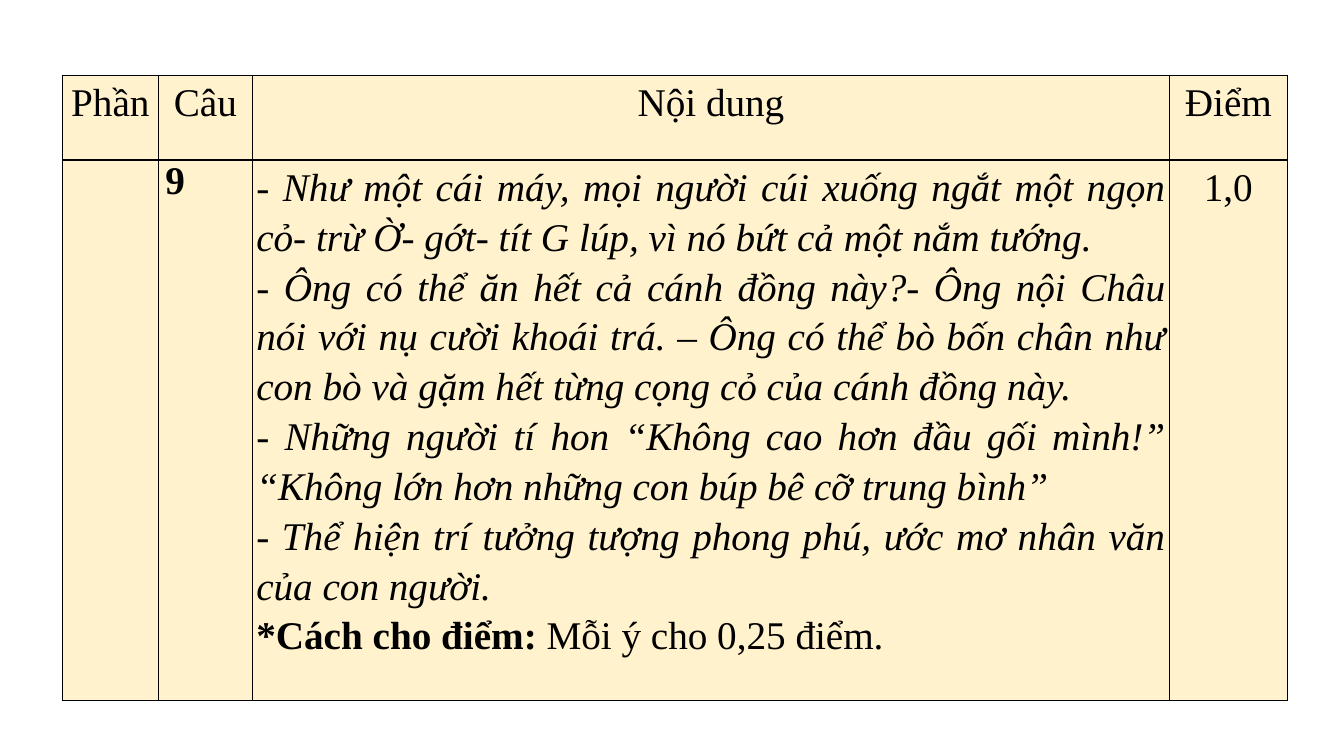
from lxml.etree import SubElement
from pptx import Presentation
from pptx.dml.color import RGBColor
from pptx.enum.text import PP_ALIGN
from pptx.oxml.ns import qn
from pptx.util import Cm, Pt

COLORS = {"text": "000000", "border": "000000", "cell": "FFF2CC", "page": "FFFFFF"}
FONT = "Times New Roman"
COLUMN_WIDTHS = [2.42, 2.37, 23.11, 2.97]
ROW_HEIGHTS = [2.13, 13.63]
HEADERS = ["Phần", "Câu", "Nội dung", "Điểm"]
ANSWERS = [
    "- Như một cái máy, mọi người cúi xuống ngắt một ngọn cỏ- trừ Ờ- gớt- tít G lúp, "
    "vì nó bứt cả một nắm tướng. ",
    "- Ông có thể ăn hết cả cánh đồng này?- Ông nội Châu nói với nụ cười khoái trá. "
    "– Ông có thể bò bốn chân như con bò và gặm hết từng cọng cỏ của cánh đồng này.",
    "- Những người tí hon “Không cao hơn đầu gối mình!” "
    "“Không lớn hơn những con búp bê cỡ trung bình”",
    "- Thể hiện trí tưởng tượng phong phú, ước mơ nhân văn của con người.",
]
SCORING = ["*Cách cho điểm:", " Mỗi ý cho 0,25 điểm."]


def format_run(run, bold=False, italic=False):
    run.font.name = FONT
    run.font.size = Pt(28)
    run.font.bold = bold
    run.font.italic = italic
    run.font.color.rgb = RGBColor.from_string(COLORS["text"])


def format_paragraph(paragraph, alignment, spacing=1.15, bold=False, italic=False):
    paragraph.alignment = alignment
    paragraph.line_spacing = spacing
    for run in paragraph.runs:
        format_run(run, bold, italic)


def style_cell(cell, side_margin=0.1):
    cell.margin_left = cell.margin_right = Cm(side_margin)
    cell.margin_top = cell.margin_bottom = 0
    properties = cell._tc.get_or_add_tcPr()
    for side in ("a:lnL", "a:lnR", "a:lnT", "a:lnB"):
        line = SubElement(properties, qn(side), w=str(Pt(1)))
        fill = SubElement(line, qn("a:solidFill"))
        SubElement(fill, qn("a:srgbClr"), val=COLORS["border"])
    cell.fill.solid()
    cell.fill.fore_color.rgb = RGBColor.from_string(COLORS["cell"])


def fill_header(cells):
    for cell, header in zip(cells, HEADERS):
        cell.text_frame.text = header
        paragraph = cell.text_frame.paragraphs[0]
        format_paragraph(paragraph, PP_ALIGN.CENTER)
        paragraph.space_before, paragraph.space_after = Pt(2), Pt(1)


def fill_answer(question, content, score):
    question.text_frame.text = "9"
    format_paragraph(question.text_frame.paragraphs[0], PP_ALIGN.JUSTIFY, 1.0, bold=True)

    content.text_frame.text = "\n".join(ANSWERS)
    for paragraph in content.text_frame.paragraphs:
        format_paragraph(paragraph, PP_ALIGN.JUSTIFY, italic=True)
    scoring = content.text_frame.add_paragraph()
    for text in SCORING:
        scoring.add_run().text = text
    format_paragraph(scoring, PP_ALIGN.JUSTIFY)
    scoring.runs[0].font.bold = True

    score.text_frame.text = "1,0"
    format_paragraph(score.text_frame.paragraphs[0], PP_ALIGN.CENTER)


def add_marking_table(slide, left, top):
    table = slide.shapes.add_table(
        len(ROW_HEIGHTS), len(COLUMN_WIDTHS), left, top,
        Cm(sum(COLUMN_WIDTHS)), Cm(sum(ROW_HEIGHTS))).table
    table.first_row = table.horz_banding = False
    for column, width in zip(table.columns, COLUMN_WIDTHS):
        column.width = Cm(width)
    for row, height in zip(table.rows, ROW_HEIGHTS):
        row.height = Cm(height)
    question = table.cell(1, 1)
    for cell in table.iter_cells():
        style_cell(cell, 0.18 if cell == question else 0.1)
    fill_header(table.rows[0].cells)
    fill_answer(question, table.cell(1, 2), table.cell(1, 3))


def main():
    presentation = Presentation()
    presentation.slide_width, presentation.slide_height = Cm(33.87), Cm(19.05)
    slide = presentation.slides.add_slide(presentation.slide_layouts[6])
    # Page background
    slide.background.fill.solid()
    slide.background.fill.fore_color.rgb = RGBColor.from_string(COLORS["page"])
    # Marking guide
    add_marking_table(slide, Cm(1.57), Cm(1.9))
    presentation.save("out.pptx")


if __name__ == "__main__":
    main()
